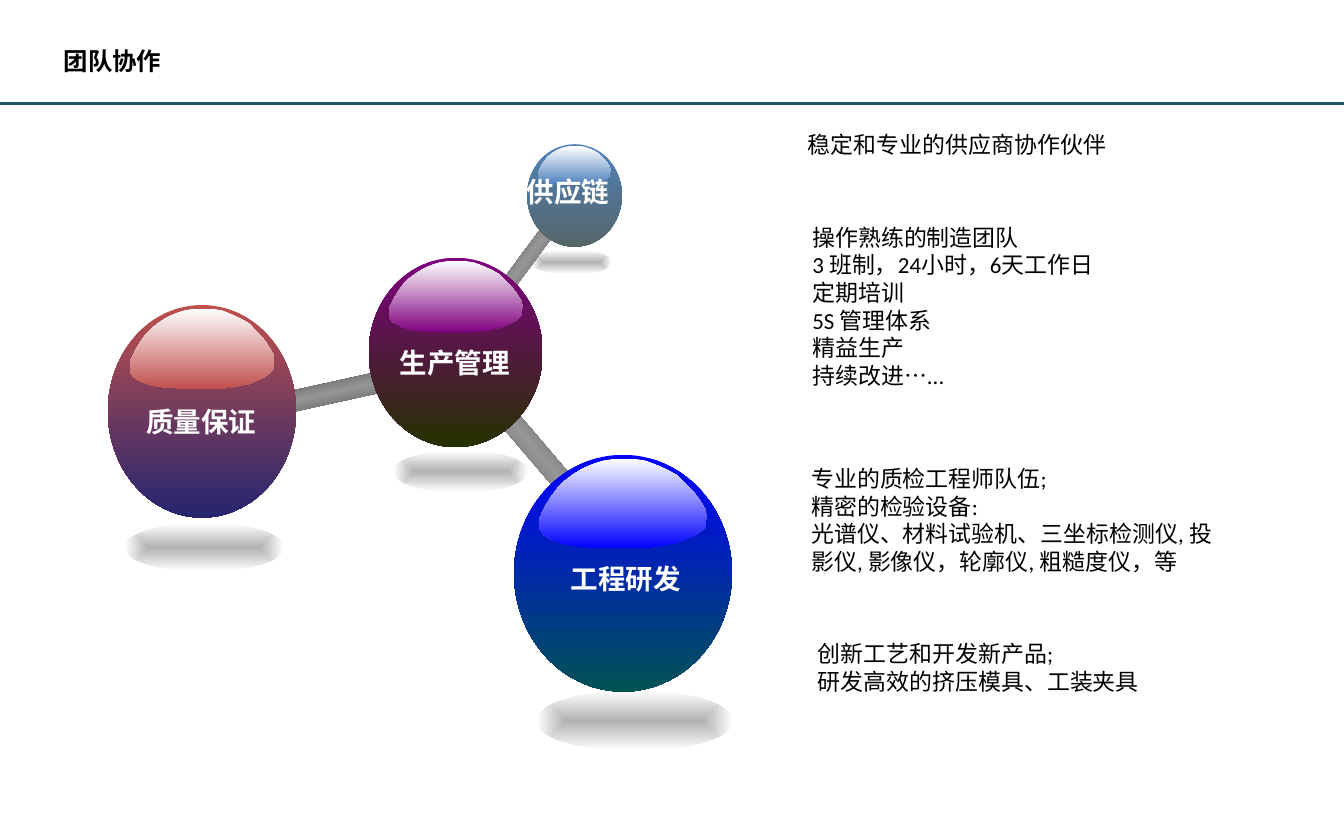
from lxml import etree
from pptx import Presentation
from pptx.dml.color import RGBColor
from pptx.enum.shapes import MSO_CONNECTOR, MSO_SHAPE
from pptx.enum.text import MSO_ANCHOR, MSO_AUTO_SIZE, PP_ALIGN
from pptx.oxml import parse_xml
from pptx.oxml.ns import nsdecls, qn
from pptx.util import Inches, Pt

OVAL, RECT = MSO_SHAPE.OVAL, MSO_SHAPE.RECTANGLE
STRAIGHT = MSO_CONNECTOR.STRAIGHT
LEFT, CENTER = PP_ALIGN.LEFT, PP_ALIGN.CENTER
TOP = MSO_ANCHOR.TOP
NO_FIT = MSO_AUTO_SIZE.NONE

VERTICAL = '<a:lin ang="5400000" scaled="0"/>'
FROM_CENTER = ('<a:path path="shape"><a:fillToRect l="50000" t="50000" '
               'r="50000" b="50000"/></a:path>')

GLOSS_W, GLOSS_H = 152, 81
GLOSS = [
    (150, 45), (152, 50), (152, 54), (151, 58), (150, 62), (147, 65), (143, 68),
    (138, 71), (132, 73), (126, 76), (119, 77), (111, 79), (103, 80), (91, 81),
    (55, 81), (47, 80), (40, 80), (33, 79), (27, 78), (21, 77), (16, 75),
    (11, 73), (7, 71), (4, 69), (2, 66), (0, 63), (0, 55), (2, 50), (6, 42),
    (11, 34), (17, 26), (23, 20), (31, 14), (39, 9), (48, 5), (57, 2), (67, 0),
    (77, 0), (87, 0), (97, 2), (107, 6), (116, 10), (125, 15), (132, 22),
    (139, 29), (145, 37),
]

SHADOWS = [
    (4.83, 2.27, 0.73, 0.22),
    (3.57, 4.09, 1.23, 0.38),
    (4.87, 6.27, 1.79, 0.55),
    (1.13, 4.75, 1.45, 0.44),
]
RODS = [
    ((4.31, 3.95, 1.04, 0.19), 229.5),
    ((2.43, 3.49, 0.99, 0.19), 347.6),
    ((4.46, 2.3, 0.64, 0.13), 306.6),
]
BALLS = [
    ("生产管理", (3.35, 2.34, 1.58, 1.72), (3.52, 3.09, 1.22, 0.4), "800080", "253200"),
    ("供应链", (4.79, 1.31, 0.86, 0.93), (4.68, 1.54, 0.96, 0.4), "4F81BD", "556667"),
    ("质量保证", (0.98, 2.77, 1.71, 1.93), (1.22, 3.63, 1.22, 0.4), "C0504D", "25256F"),
    ("工程研发", (4.67, 4.13, 1.98, 2.15), (5.08, 5.05, 1.21, 0.4), "0000FF", "005353"),
]
NOTES = [
    ((7.21, 1.13, 3.88, 0.38), ["稳定和专业的供应商协作伙伴"]),
    ((7.25, 1.97, 3.8, 1.64), [
        "操作熟练的制造团队", "3 班制，24小时，6天工作日", "定期培训",
        "5S 管理体系", "精益生产", "持续改进…..."]),
    ((7.24, 4.16, 4.01, 1.14), [
        "专业的质检工程师队伍;", "精密的检验设备:",
        "光谱仪、材料试验机、三坐标检测仪, 投影仪, 影像仪，轮廓仪, 粗糙度仪，等"]),
    ((7.3, 5.75, 3.89, 0.63), [
        "创新工艺和开发新产品;", "研发高效的挤压模具、工装夹具"]),
]


def rgb(color):
    return RGBColor.from_string(color)


def inches(box):
    return [Inches(v) for v in box]


def set_font(font, size, color, bold=False, name="Calibri"):
    font.size, font.bold, font.name = Pt(size), bold, name
    font.color.rgb = rgb(color)


def set_gradient(sp, colors, direction=VERTICAL):
    step = 100000 // (len(colors) - 1)
    stops = "".join(f'<a:gs pos="{i * step}"><a:srgbClr val="{c}"/></a:gs>'
                    for i, c in enumerate(colors))
    sp.fill.background()
    no_fill = sp._element.spPr.find(qn("a:noFill"))
    no_fill.getparent().replace(no_fill, parse_xml(
        f'<a:gradFill {nsdecls("a")} rotWithShape="1">'
        f'<a:gsLst>{stops}</a:gsLst>{direction}</a:gradFill>'))
    sp.line.fill.background()
    sp.shadow.inherit = False


def add_shape(s, kind, box, colors, direction=VERTICAL):
    sp = s.shapes.add_shape(kind, *inches(box))
    set_gradient(sp, colors, direction)
    return sp


def add_text(s, box, lines, size, color, bold=False, align=LEFT, wrap=True,
             margins=(0.13, 0.06)):
    tf = s.shapes.add_textbox(*inches(box)).text_frame
    tf.word_wrap = wrap
    tf.margin_left = tf.margin_right = Inches(margins[0])
    tf.margin_top = tf.margin_bottom = Inches(margins[1])
    for i, line in enumerate(lines):
        p = tf.paragraphs[0] if i == 0 else tf.add_paragraph()
        p.text = line
        p.alignment = align
        set_font(p.font, size, color, bold)


def add_header(s, box):
    left, top, width, height = box
    title = s.shapes.title
    title.left, title.top, title.width, title.height = inches(
        (left + 0.48, top + 0.37, 1.1, 0.37))
    tf = title.text_frame
    tf.text = "团队协作"
    tf.auto_size, tf.word_wrap, tf.vertical_anchor = NO_FIT, False, TOP
    p = tf.paragraphs[0]
    p.alignment = LEFT
    set_font(p.font, 16, "000000", True, "Noto Sans CJK SC")
    bottom = top + height
    rule = s.shapes.add_connector(
        STRAIGHT, *inches((left, bottom, left + width, bottom)))
    rule.line.color.rgb = rgb("215968")
    rule.line.width = Pt(2.25)
    etree.SubElement(rule._element.spPr, qn("a:effectLst"))


def add_ball(s, box, label, label_box, top_color, bottom_color):
    left, top, width, height = box
    add_shape(s, OVAL, box, [top_color, bottom_color])
    scale = (Inches(width * 0.77 / GLOSS_W), Inches(height * 0.377 / GLOSS_H))
    builder = s.shapes.build_freeform(*GLOSS[0], scale=scale)
    builder.add_line_segments(GLOSS[1:])
    gloss = builder.convert_to_shape(
        Inches(left + width * 0.116), Inches(top + height * 0.017))
    set_gradient(gloss, ["FFFFFF", top_color])
    add_text(s, label_box, [label], 18, "FFFFFF", True, CENTER, False, (0.1, 0.05))


def add_molecule(s):
    for box in SHADOWS:
        add_shape(s, OVAL, box, ["B2B2B2", "FFFFFF"], FROM_CENTER)
    for box, angle in RODS:
        add_shape(s, RECT, box, ["454545", "969696", "454545"]).rotation = angle
    for label, box, label_box, top_color, bottom_color in BALLS:
        add_ball(s, box, label, label_box, top_color, bottom_color)


def add_notes(s):
    for box, lines in NOTES:
        add_text(s, box, lines, 15, "000000")


def main():
    prs = Presentation()
    prs.slide_width, prs.slide_height = Inches(12.21), Inches(7.5)
    s = prs.slides.add_slide(prs.slide_layouts[5])
    add_header(s, (0, 0, 12.21, 0.94))
    add_molecule(s)
    add_notes(s)
    prs.save("out.pptx")


if __name__ == "__main__":
    main()
